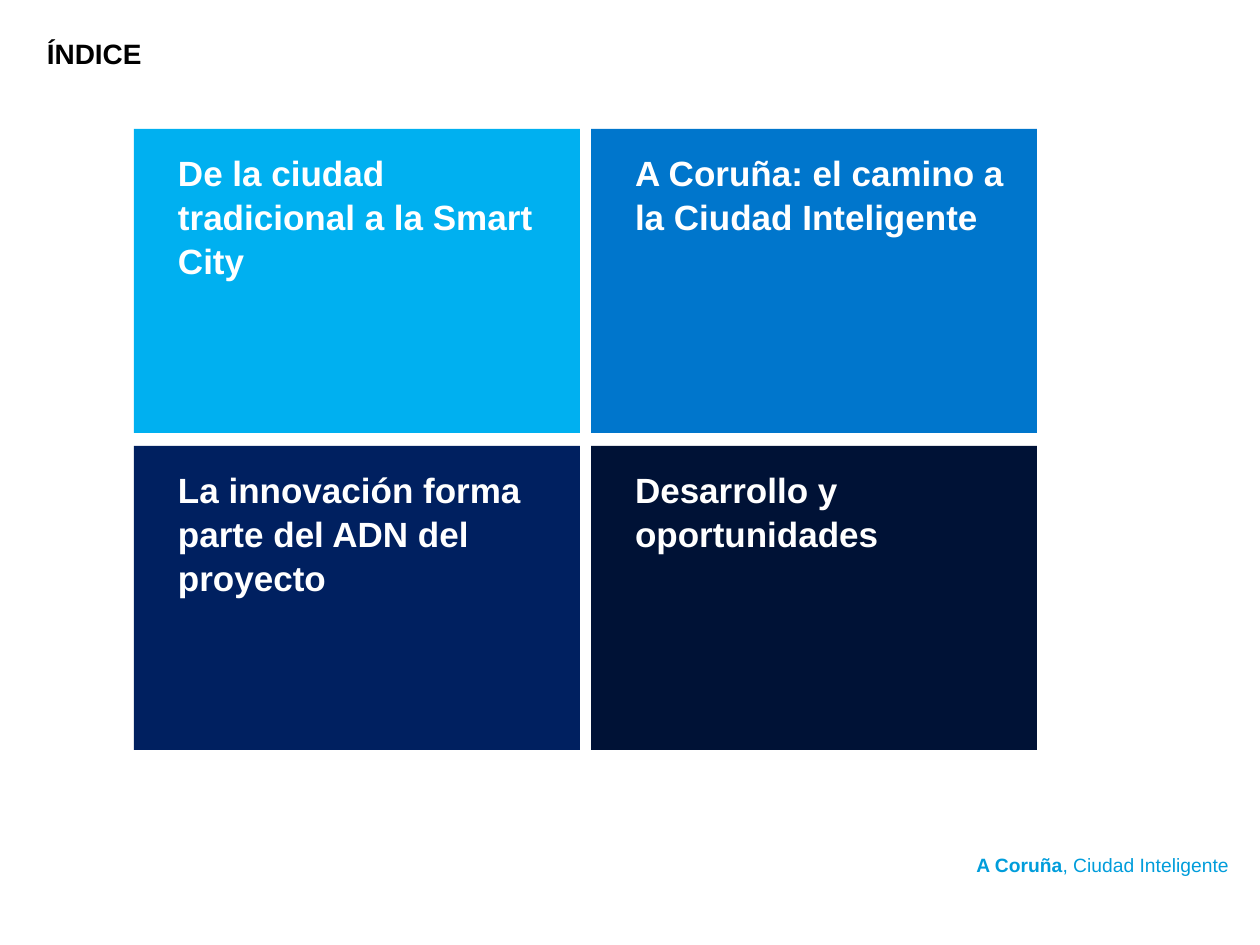
from pptx import Presentation
from pptx.dml.color import RGBColor
from pptx.enum.shapes import MSO_SHAPE as SHAPE
from pptx.enum.text import MSO_ANCHOR as ANCHOR, PP_ALIGN as ALIGN
from pptx.util import Pt

PX = 914400 // 126
BLACK = RGBColor(0x00, 0x00, 0x00)
WHITE = RGBColor(0xFF, 0xFF, 0xFF)
CYAN = RGBColor(0x00, 0x9D, 0xDB)
SKY = RGBColor(0x00, 0xB0, 0xF0)
BLUE = RGBColor(0x00, 0x76, 0xCC)
NAVY = RGBColor(0x00, 0x20, 0x60)
MIDNIGHT = RGBColor(0x00, 0x12, 0x36)

TITLE = "ÍNDICE"
TOPICS = [
    ("De la ciudad tradicional a la Smart City", SKY),
    ("A Coruña: el camino a la Ciudad Inteligente", BLUE),
    ("La innovación forma parte del ADN del proyecto", NAVY),
    ("Desarrollo y oportunidades", MIDNIGHT),
]
FOOTER = [("A Coruña", True), (", Ciudad Inteligente", False)]

# Tile grid, in px
COLS = 2
LEFT, TOP = 134, 129
TILE_W, TILE_H = 446, 304
GAP_X, GAP_Y = 11, 13


def px(*values):
    return [v * PX for v in values]


def set_frame(tf, insets):
    tf.word_wrap = True
    tf.vertical_anchor = ANCHOR.TOP
    tf.margin_left, tf.margin_top, tf.margin_right, tf.margin_bottom = px(*insets)


def add_run(p, text, size, color, bold=True):
    r = p.add_run()
    r.text = text
    r.font.name = "Arial"
    r.font.size = Pt(size)
    r.font.bold = bold
    r.font.color.rgb = color


prs = Presentation()
prs.slide_width, prs.slide_height = px(1260, 945)
s = prs.slides.add_slide(prs.slide_layouts[5])

# Title
title = s.shapes.title
title.left, title.top, title.width, title.height = px(47, 37, 287, 40)
set_frame(title.text_frame, (0, 0, 13, 6))
p = title.text_frame.paragraphs[0]
p.alignment = ALIGN.LEFT
add_run(p, TITLE, 16, BLACK)

# Topic tiles
for i, (text, color) in enumerate(TOPICS):
    row, col = divmod(i, COLS)
    x = LEFT + col * (TILE_W + GAP_X)
    y = TOP + row * (TILE_H + GAP_Y)
    sp = s.shapes.add_shape(SHAPE.RECTANGLE, *px(x, y, TILE_W, TILE_H))
    sp.shadow.inherit = False
    sp.fill.solid()
    sp.fill.fore_color.rgb = color
    sp.line.fill.background()
    set_frame(sp.text_frame, (44, 20, 20, 20))
    p = sp.text_frame.paragraphs[0]
    p.alignment = ALIGN.LEFT
    p.line_spacing = 1.05
    add_run(p, text, 20, WHITE)

# Footer
footer = s.shapes.add_textbox(*px(829, 853, 400, 24))
set_frame(footer.text_frame, (0, 0, 0, 0))
p = footer.text_frame.paragraphs[0]
p.alignment = ALIGN.RIGHT
for text, bold in FOOTER:
    add_run(p, text, 11, CYAN, bold)

prs.save("out.pptx")
